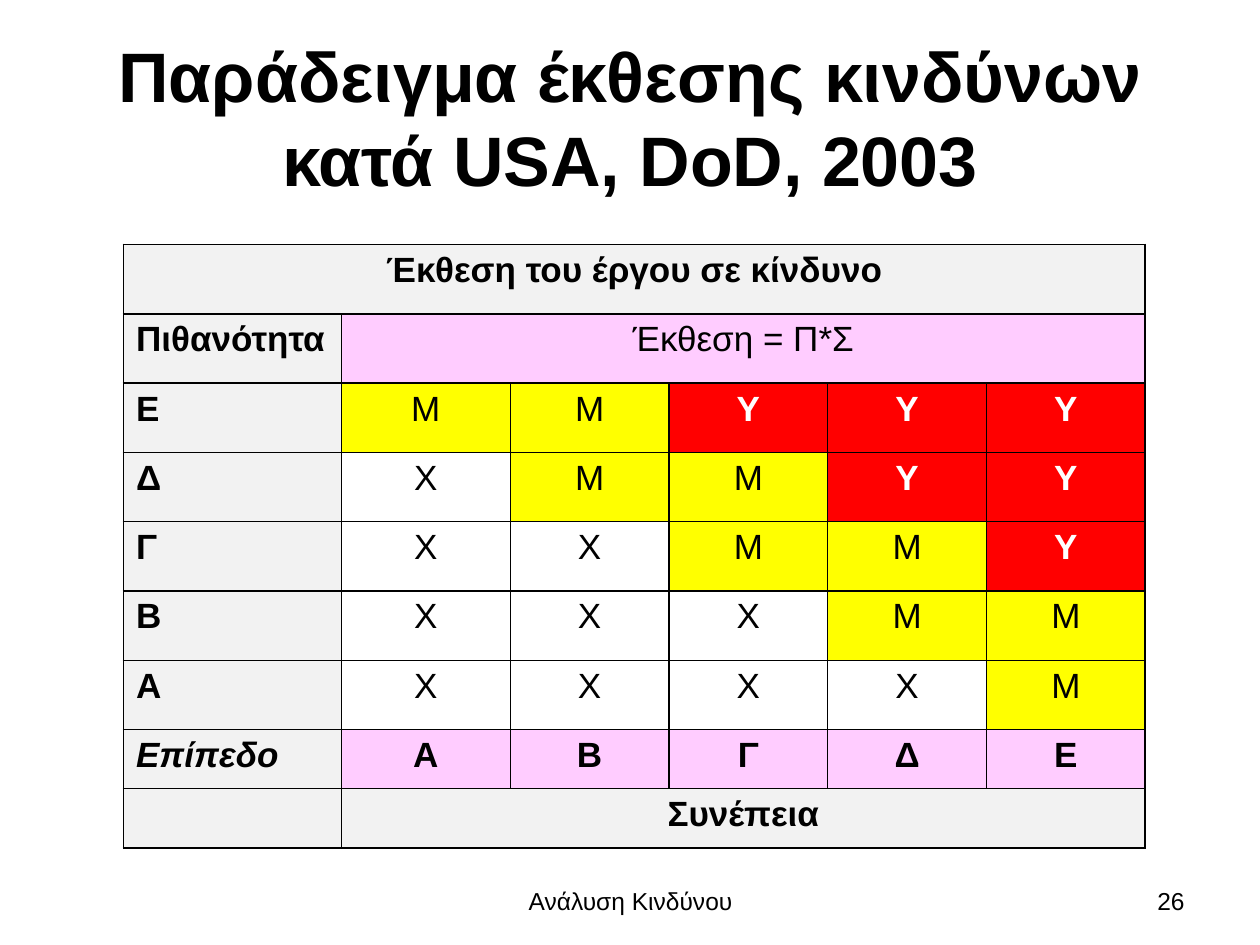
from lxml import etree
from pptx import Presentation
from pptx.dml.color import RGBColor
from pptx.enum.text import MSO_ANCHOR, PP_ALIGN
from pptx.oxml.ns import qn
from pptx.util import Inches, Pt

LEFT, CENTER, RIGHT = PP_ALIGN.LEFT, PP_ALIGN.CENTER, PP_ALIGN.RIGHT
MIDDLE = MSO_ANCHOR.MIDDLE
BLACK = RGBColor(0, 0, 0)
WHITE = RGBColor(255, 255, 255)
GRAY = RGBColor(0xF2, 0xF2, 0xF2)
PINK = RGBColor(0xFF, 0xCC, 0xFF)
YELLOW = RGBColor(255, 255, 0)
RED = RGBColor(255, 0, 0)

TITLE = "Παράδειγμα έκθεσης κινδύνων κατά USA, DoD, 2003"
TOP_HEADER = "Έκθεση του έργου σε κίνδυνο"
PROBABILITY = "Πιθανότητα"
FORMULA = "Έκθεση = Π*Σ"
RISKS = [("Ε", "ΜΜΥΥΥ"), ("Δ", "ΧΜΜΥΥ"), ("Γ", "ΧΧΜΜΥ"), ("Β", "ΧΧΧΜΜ"), ("Α", "ΧΧΧΧΜ")]
LEVEL, LEVELS = "Επίπεδο", "ΑΒΓΔΕ"
CONSEQUENCE = "Συνέπεια"
RATING_FILL = {"Χ": WHITE, "Μ": YELLOW, "Υ": RED}
COLS = [1.73, 1.34] + [1.26] * 4
ROWS = [0.55] * 7 + [0.47] * 2
FOOTERS = [("Ανάλυση Κινδύνου", 3.42, 3.17, CENTER), ("26", 7.17, 2.33, RIGHT)]


def write(tf, text, size=20, bold=False, italic=False, color=BLACK, align=LEFT):
    p = tf.paragraphs[0]
    p.alignment = align
    r = p.add_run()
    r.text = text
    f = r.font
    f.name, f.size, f.bold, f.italic = "Arial", Pt(size), bold, italic
    f.color.rgb = color


def add_borders(cell):
    tcPr = cell._tc.get_or_add_tcPr()
    for side in ("a:lnL", "a:lnR", "a:lnT", "a:lnB"):
        ln = etree.SubElement(tcPr, qn(side), w=str(Pt(1)))
        fill = etree.SubElement(ln, qn("a:solidFill"))
        etree.SubElement(fill, qn("a:srgbClr"), val=str(BLACK))


def fill_cell(row, col, text, fill, last=None, **fmt):
    cell = table.cell(row, col)
    if last is not None:
        cell.merge(table.cell(row, last))
    cell.fill.solid()
    cell.fill.fore_color.rgb = fill
    if text:
        write(cell.text_frame, text, align=CENTER if col or last else LEFT, **fmt)


prs = Presentation()
prs.slide_width, prs.slide_height = Inches(10), Inches(7.5)
s = prs.slides.add_slide(prs.slide_layouts[5])

title = s.shapes.title
title.left, title.top, title.width, title.height = map(Inches, (0.5, 0.3, 9, 1.25))
title.text_frame.vertical_anchor = MIDDLE
write(title.text_frame, TITLE, size=40, bold=True, align=CENTER)

table = s.shapes.add_table(len(ROWS), len(COLS), Inches(0.98), Inches(1.94),
                           Inches(sum(COLS)), Inches(sum(ROWS))).table
table.first_row = table.horz_banding = False
for column, width in zip(table.columns, COLS):
    column.width = Inches(width)
for row, height in zip(table.rows, ROWS):
    row.height = Inches(height)
for cell in table.iter_cells():
    add_borders(cell)

fill_cell(0, 0, TOP_HEADER, GRAY, last=5, bold=True)
fill_cell(1, 0, PROBABILITY, GRAY, bold=True)
fill_cell(1, 1, FORMULA, PINK, last=5)
for row, (label, ratings) in enumerate(RISKS, 2):
    fill_cell(row, 0, label, GRAY, bold=True)
    for col, rating in enumerate(ratings, 1):
        high = rating == "Υ"
        fill_cell(row, col, rating, RATING_FILL[rating], bold=high,
                  color=WHITE if high else BLACK)
fill_cell(7, 0, LEVEL, GRAY, bold=True, italic=True)
for col, level in enumerate(LEVELS, 1):
    fill_cell(7, col, level, PINK, bold=True)
fill_cell(8, 0, "", GRAY)
fill_cell(8, 1, CONSEQUENCE, GRAY, last=5, bold=True)

for text, left, width, align in FOOTERS:
    tf = s.shapes.add_textbox(Inches(left), Inches(6.95), Inches(width), Inches(0.4)).text_frame
    tf.word_wrap = True
    tf.vertical_anchor = MIDDLE
    write(tf, text, size=14, align=align)

prs.save("out.pptx")
